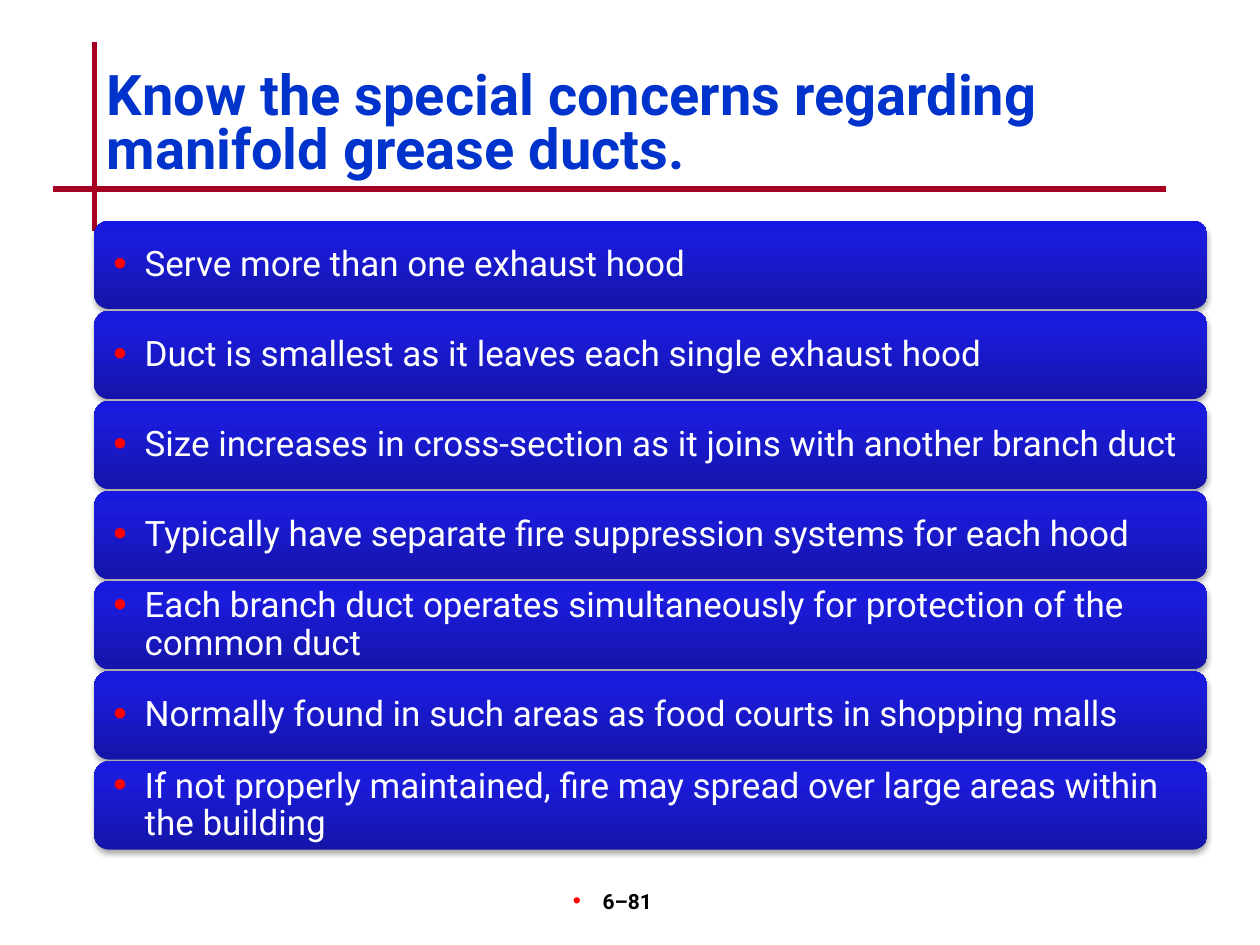
from copy import deepcopy

from lxml import etree
from pptx import Presentation
from pptx.dml.color import RGBColor
from pptx.enum.shapes import MSO_CONNECTOR, MSO_SHAPE
from pptx.enum.text import MSO_ANCHOR, PP_ALIGN
from pptx.oxml.ns import qn
from pptx.util import Cm, Pt

STRAIGHT = MSO_CONNECTOR.STRAIGHT
ROUNDED = MSO_SHAPE.ROUNDED_RECTANGLE
MIDDLE = MSO_ANCHOR.MIDDLE
LEFT, CENTER = PP_ALIGN.LEFT, PP_ALIGN.CENTER

FONT = "Roboto"
BAR_STOPS = [(0, "1515A9"), (0.8, "1B1BDC"), (1, "1818E1")]
FIRST_TOP, LAST_TOP, BAR_HEIGHT = 4.45, 15.35, 1.78

CONCERNS = [
    "Serve more than one exhaust hood",
    "Duct is smallest as it leaves each single exhaust hood",
    "Size increases in cross-section as it joins with another branch duct",
    "Typically have separate fire suppression systems for each hood",
    "Each branch duct operates simultaneously for protection of the common duct",
    "Normally found in such areas as food courts in shopping malls",
    "If not properly maintained, fire may spread over large areas within the building",
]


def color(hex_string):
    return RGBColor.from_string(hex_string)


def add_element(parent, tag, **attributes):
    element = etree.SubElement(parent, qn(tag))
    for name, value in attributes.items():
        element.set(name, str(value))
    return element


def add_rule(slide, x1, y1, x2, y2):
    rule = slide.shapes.add_connector(STRAIGHT, Cm(x1), Cm(y1), Cm(x2), Cm(y2))
    rule.line.color.rgb = color("A50021")
    rule.line.width = Pt(3)
    add_element(rule._element.spPr, "a:effectLst")


def add_bullet(paragraph, hanging):
    props = paragraph._p.get_or_add_pPr()
    props.set("marL", str(Cm(hanging)))
    props.set("indent", str(-Cm(hanging)))
    add_element(add_element(props, "a:buClr"), "a:srgbClr", val="FF0000")
    add_element(props, "a:buSzPct", val=110000)
    add_element(props, "a:buFont", typeface="Arial")
    add_element(props, "a:buChar", char="•")


def write_text(shape, text, size, hex_color, bold=False, align=LEFT,
               spacing=1.0, hanging=None):
    frame = shape.text_frame
    frame.word_wrap = True
    frame.vertical_anchor = MIDDLE
    paragraph = frame.paragraphs[0]
    paragraph.text = text
    paragraph.alignment = align
    paragraph.line_spacing = spacing
    if hanging:
        add_bullet(paragraph, hanging)
    font = paragraph.font
    font.name, font.size, font.bold = FONT, Pt(size), bold
    font.color.rgb = color(hex_color)
    return frame


def add_textbox(slide, left, top, width, height):
    return slide.shapes.add_textbox(Cm(left), Cm(top), Cm(width), Cm(height))


def fill_bar(bar):
    bar.fill.gradient()
    bar.fill.gradient_angle = 90
    stops = bar.fill.gradient_stops
    first = bar._element.spPr.find(".//" + qn("a:gs"))
    first.addnext(deepcopy(first))
    for stop, (position, hex_color) in zip(stops, BAR_STOPS):
        stop.position = position
        stop.color.rgb = color(hex_color)


def add_bar_shadow(bar):
    bar.shadow.inherit = False
    effects = bar._element.spPr.find(qn("a:effectLst"))
    shadow = add_element(effects, "a:outerShdw", blurRad=Pt(3.1), dist=Pt(1.8),
                         dir=5400000, rotWithShape=0)
    black = add_element(shadow, "a:srgbClr", val="000000")
    add_element(black, "a:alpha", val=35000)


def add_concern(slide, text, top):
    bar = slide.shapes.add_shape(ROUNDED, Cm(1.9), Cm(top), Cm(22.44), Cm(BAR_HEIGHT))
    fill_bar(bar)
    bar.line.fill.background()
    add_bar_shadow(bar)
    frame = write_text(bar, text, 20, "FFFFFF", spacing=0.9, hanging=0.63)
    frame.margin_left = frame.margin_right = Cm(0.3)
    frame.margin_top = frame.margin_bottom = Cm(0.1)


def main():
    deck = Presentation()
    deck.slide_width, deck.slide_height = Cm(25.4), Cm(19.05)
    slide = deck.slides.add_slide(deck.slide_layouts[6])

    # Crossed rules framing the title
    add_rule(slide, 1.9, 0.85, 1.9, 4.66)
    add_rule(slide, 1.06, 3.81, 23.5, 3.81)

    # Slide number
    number = add_textbox(slide, 9.95, 17.78, 5.29, 1.27)
    frame = write_text(number, "6–81", 12, "000000", bold=True,
                       align=CENTER, hanging=0.6)
    frame.vertical_anchor = MSO_ANCHOR.TOP
    frame.margin_left, frame.margin_right = 0, Cm(0.5)

    # Title
    title = add_textbox(slide, 1.9, 1.06, 21.59, 2.97)
    write_text(title, "Know the special concerns regarding manifold grease ducts.",
               32, "0033CC", bold=True, spacing=0.8)

    # Evenly stacked concerns
    pitch = (LAST_TOP - FIRST_TOP) / (len(CONCERNS) - 1)
    for row, concern in enumerate(CONCERNS):
        add_concern(slide, concern, FIRST_TOP + row * pitch)

    deck.save("out.pptx")


if __name__ == "__main__":
    main()
